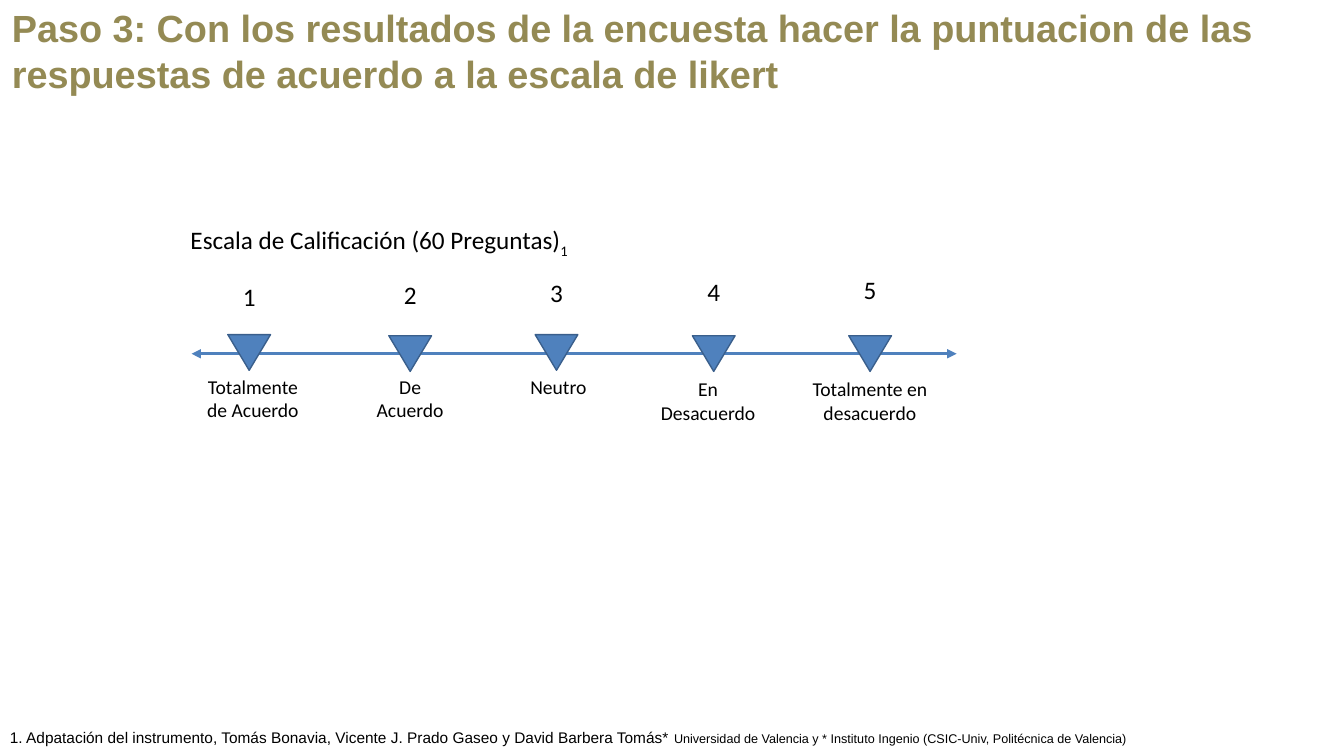
from collections import namedtuple

from lxml import etree
from pptx import Presentation
from pptx.dml.color import RGBColor
from pptx.enum.shapes import MSO_CONNECTOR, MSO_SHAPE
from pptx.enum.text import MSO_AUTO_SIZE, PP_ALIGN
from pptx.oxml.ns import qn
from pptx.util import Pt

STRAIGHT = MSO_CONNECTOR.STRAIGHT
TRIANGLE = MSO_SHAPE.ISOSCELES_TRIANGLE
GROW = MSO_AUTO_SIZE.SHAPE_TO_FIT_TEXT
LEFT, CENTER = PP_ALIGN.LEFT, PP_ALIGN.CENTER

BLACK, OLIVE, BLUE, DARK_BLUE = "000000", "948A54", "4F81BD", "3A5F8C"
SCALE_Y = 252.7
MARK_WIDTH, MARK_HEIGHT = 30.5, 25.5
NUMBER_WIDTH, NUMBER_TOP, NUMBER_RISE = 113.8, 197.3, 1.25

Grade = namedtuple("Grade", "label center mark_top label_center label_top label_width label_height")
GRADES = [
    Grade("Totalmente de Acuerdo", 178, 239, 180.7, 264.2, 80.4, 41),
    Grade("De Acuerdo", 293, 239.8, 293, 264.2, 80.4, 41),
    Grade("Neutro", 397.5, 239, 398.9, 264.2, 80.4, 24.5),
    Grade("En Desacuerdo", 509.8, 239.8, 505.8, 265.7, 92.9, 41),
    Grade("Totalmente en desacuerdo", 621.5, 239.8, 621.4, 265.7, 113.8, 41),
]


def rgb(color):
    return RGBColor.from_string(color)


def add_run(paragraph, text, size, font="Calibri", color=BLACK, bold=False, baseline=None):
    """Append formatted text; baseline is a percentage, negative for subscript."""
    run = paragraph.add_run()
    run.text = text
    run.font.size = Pt(size)
    run.font.name = font
    run.font.bold = bold
    run.font.color.rgb = rgb(color)
    if baseline is not None:
        run.font._element.set("baseline", str(baseline * 1000))


def add_text(slide, text, left, top, width, height, align=LEFT, wrap=True, **run_format):
    """Add a text box and return its paragraph, so that runs can follow."""
    frame = slide.shapes.add_textbox(Pt(left), Pt(top), Pt(width), Pt(height)).text_frame
    frame.word_wrap = wrap
    frame.auto_size = GROW
    paragraph = frame.paragraphs[0]
    paragraph.alignment = align
    add_run(paragraph, text, **run_format)
    return paragraph


def add_double_arrow(slide, start, end, y):
    arrow = slide.shapes.add_connector(STRAIGHT, Pt(start), Pt(y), Pt(end), Pt(y))
    arrow.line.color.rgb = rgb(BLUE)
    arrow.line.width = Pt(2.25)
    outline = arrow.line._get_or_add_ln()
    for tip in ("a:headEnd", "a:tailEnd"):
        etree.SubElement(outline, qn(tip), type="triangle")
    etree.SubElement(arrow._element.spPr, qn("a:effectLst"))


def add_mark(slide, center, top):
    mark = slide.shapes.add_shape(
        TRIANGLE, Pt(center - MARK_WIDTH / 2), Pt(top), Pt(MARK_WIDTH), Pt(MARK_HEIGHT))
    mark.rotation = 180
    mark.shadow.inherit = False
    mark.fill.solid()
    mark.fill.fore_color.rgb = rgb(BLUE)
    mark.line.color.rgb = rgb(DARK_BLUE)
    mark.line.width = Pt(1)


def add_grade(slide, index, grade):
    add_mark(slide, grade.center, grade.mark_top)
    add_text(slide, grade.label, grade.label_center - grade.label_width / 2, grade.label_top,
             grade.label_width, grade.label_height, align=CENTER, size=14)
    add_text(slide, str(index + 1), grade.center - NUMBER_WIDTH / 2,
             NUMBER_TOP - index * NUMBER_RISE, NUMBER_WIDTH, 29, align=CENTER, size=18)


def main():
    presentation = Presentation()
    presentation.slide_width, presentation.slide_height = Pt(960), Pt(540)
    slide = presentation.slides.add_slide(presentation.slide_layouts[6])

    add_text(slide, "Paso 3: Con los resultados de la encuesta hacer la puntuacion de las "
             "respuestas de acuerdo a la escala de likert",
             1.4, 0, 959, 72.7, size=27, font="Arial", color=OLIVE, bold=True)

    heading = add_text(slide, "Escala de Calificación (60 Preguntas)",
                       129, 157, 288, 29, wrap=False, size=18)
    add_run(heading, "1", size=18, baseline=-25)

    add_double_arrow(slide, 136.8, 683.3, SCALE_Y)
    for index, grade in enumerate(GRADES):
        add_grade(slide, index, grade)

    footnote = add_text(slide, "1. Adpatación del instrumento, Tomás Bonavia, Vicente J. Prado "
                        "Gaseo y David Barbera Tomás* ",
                        0, 516.2, 917.3, 20.9, size=11, font="Arial")
    add_run(footnote, "Universidad de Valencia y * Instituto Ingenio "
            "(CSIC-Univ, Politécnica de Valencia)", size=9, font="Arial")

    presentation.save("out.pptx")


if __name__ == "__main__":
    main()
